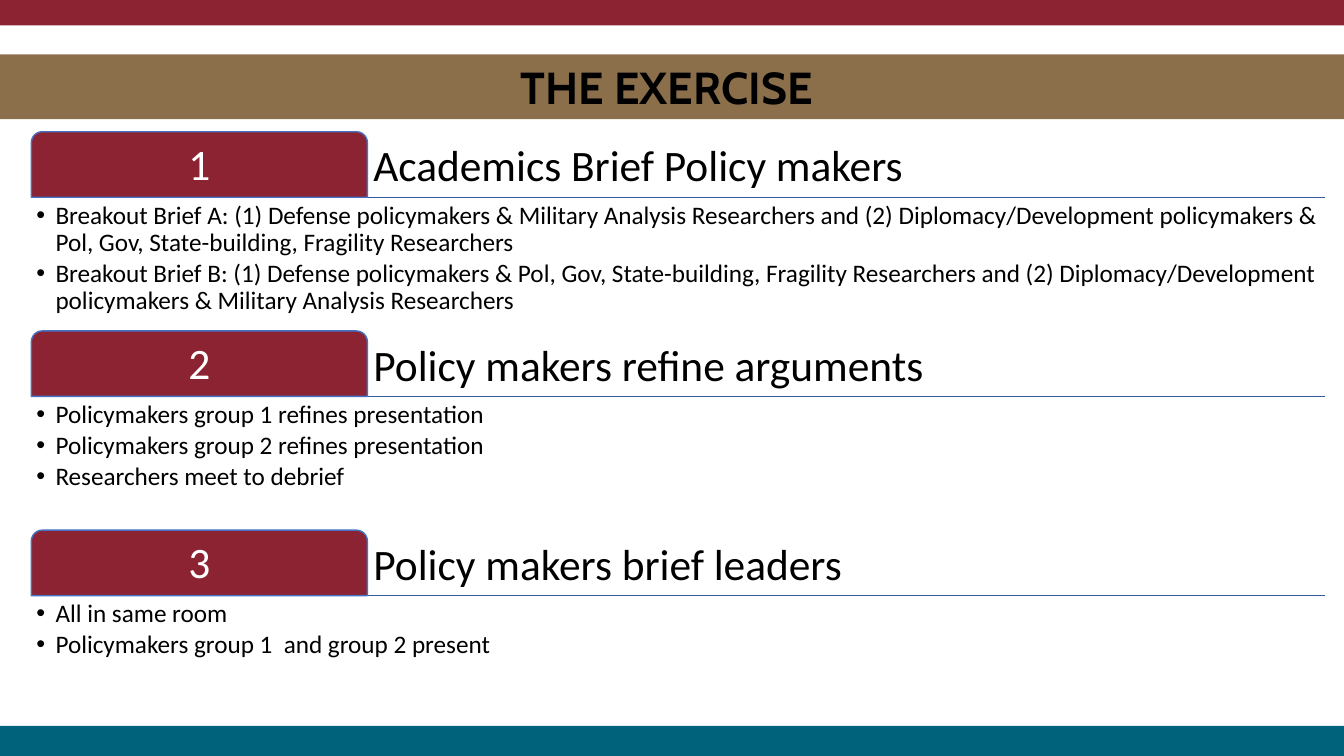
from dataclasses import dataclass

from lxml import etree
from pptx import Presentation
from pptx import util as u
from pptx.dml.color import RGBColor
from pptx.enum import shapes, text
from pptx.oxml import ns

MAROON, TEAL, BRONZE = "8B2332", "00637B", "8B6F4B"
RULE_BLUE, TAB_BLUE = "365B9D", "4472C4"
BLACK, WHITE = "000000", "FFFFFF"

# Layout in centimetres
PAGE_W, PAGE_H = 33.87, 19.05
LEFT, FULL_W, TAB_W = 0.79, 32.6, 8.47
FIRST_TOP, PITCH = 3.32, 5.02
HEADER_H, DETAIL_H = 1.65, 3.3
HANG = 0.48


@dataclass
class Step:
    heading: str
    details: list[str]


STEPS = [
    Step("Academics Brief Policy makers", [
        "Breakout Brief A: (1) Defense policymakers & Military Analysis Researchers and "
        "(2) Diplomacy/Development policymakers & Pol, Gov, State-building, Fragility Researchers",
        "Breakout Brief B: (1) Defense policymakers & Pol, Gov, State-building, Fragility "
        "Researchers and (2) Diplomacy/Development policymakers & Military Analysis Researchers",
    ]),
    Step("Policy makers refine arguments", [
        "Policymakers group 1 refines presentation",
        "Policymakers group 2 refines presentation",
        "Researchers meet to debrief",
    ]),
    Step("Policy makers brief leaders", [
        "All in same room",
        "Policymakers group 1  and group 2 present",
    ]),
]


def colour(code: str) -> RGBColor:
    return RGBColor.from_string(code)


def place(box, left: float, top: float, width: float, height: float) -> None:
    box.left, box.top = u.Cm(left), u.Cm(top)
    box.width, box.height = u.Cm(width), u.Cm(height)


def add_bullet(para) -> None:
    para.level = 1
    props = para._p.get_or_add_pPr()
    props.set("marL", str(u.Cm(HANG)))
    props.set("indent", str(-u.Cm(HANG)))
    etree.SubElement(props, ns.qn("a:buFont")).set("typeface", "Arial")
    etree.SubElement(props, ns.qn("a:buChar")).set("char", "•")


def write(box, lines: list[str], *, size: float, ink: str = BLACK, font: str = "Calibri",
          bold: bool = False, align=text.PP_ALIGN.LEFT, anchor=text.MSO_ANCHOR.TOP,
          inset: float = 0.15, spacing: float = 0.9, after: float = 0,
          bullets: bool = False) -> None:
    frame = box.text_frame
    frame.word_wrap = True
    frame.auto_size = text.MSO_AUTO_SIZE.NONE
    frame.vertical_anchor = anchor
    frame.margin_left = frame.margin_right = u.Cm(inset)
    frame.margin_top = frame.margin_bottom = u.Cm(inset)
    for index, line in enumerate(lines):
        para = frame.add_paragraph() if index else frame.paragraphs[0]
        para.alignment = align
        para.line_spacing = spacing
        para.space_before, para.space_after = u.Pt(0), u.Pt(after)
        if bullets:
            add_bullet(para)
        span = para.add_run()
        span.text = line
        span.font.name, span.font.size, span.font.bold = font, u.Pt(size), bold
        span.font.color.rgb = colour(ink)


def add_block(page, kind, left: float, top: float, width: float, height: float,
              fill: str, outline: str | None = None):
    block = page.shapes.add_shape(kind, 0, 0, 0, 0)
    place(block, left, top, width, height)
    block.shadow.inherit = False
    block.fill.solid()
    block.fill.fore_color.rgb = colour(fill)
    if outline:
        block.line.color.rgb = colour(outline)
        block.line.width = u.Pt(1)
    else:
        block.line.fill.background()
    return block


def add_text_box(page, left: float, top: float, width: float, height: float):
    return page.shapes.add_textbox(u.Cm(left), u.Cm(top), u.Cm(width), u.Cm(height))


def add_rule(page, top: float) -> None:
    rule = page.shapes.add_connector(shapes.MSO_CONNECTOR.STRAIGHT, u.Cm(LEFT), u.Cm(top),
                                     u.Cm(LEFT + FULL_W), u.Cm(top))
    rule.line.color.rgb = colour(RULE_BLUE)
    rule.line.width = u.Pt(1)
    etree.SubElement(rule._element.spPr, ns.qn("a:effectLst"))


def add_step(page, number: int, step: Step) -> None:
    top = FIRST_TOP + (number - 1) * PITCH
    base = top + HEADER_H
    add_rule(page, base)

    heading = add_text_box(page, LEFT + TAB_W, top, FULL_W - TAB_W, HEADER_H)
    write(heading, [step.heading], size=31, anchor=text.MSO_ANCHOR.BOTTOM)

    tab = add_block(page, shapes.MSO_SHAPE.ROUND_2_SAME_RECTANGLE,
                    LEFT, top, TAB_W, HEADER_H, MAROON, TAB_BLUE)
    tab.adjustments[0], tab.adjustments[1] = 0.167, 0
    write(tab, [str(number)], size=31, ink=WHITE, align=text.PP_ALIGN.CENTER,
          anchor=text.MSO_ANCHOR.MIDDLE)

    details = add_text_box(page, LEFT, base, FULL_W, DETAIL_H)
    write(details, step.details, size=18, inset=0.13, after=2.7, bullets=True)


def main() -> None:
    deck = Presentation()
    deck.slide_width, deck.slide_height = u.Cm(PAGE_W), u.Cm(PAGE_H)
    page = deck.slides.add_slide(deck.slide_layouts.get_by_name("Title Only"))

    # Bands at the top and bottom edges
    for top, height, fill in [(0, 0.64, MAROON), (18.29, 0.76, TEAL)]:
        add_block(page, shapes.MSO_SHAPE.RECTANGLE, 0, top, PAGE_W, height, fill)

    # Title band
    title = page.shapes.title
    place(title, 0, 1.37, PAGE_W, 1.63)
    title.fill.solid()
    title.fill.fore_color.rgb = colour(BRONZE)
    write(title, ["THE EXERCISE "], size=32, font="Cabin", bold=True, spacing=1.0,
          align=text.PP_ALIGN.CENTER, anchor=text.MSO_ANCHOR.MIDDLE)

    # Numbered steps
    for number, step in enumerate(STEPS, start=1):
        add_step(page, number, step)

    deck.save("out.pptx")


if __name__ == "__main__":
    main()
